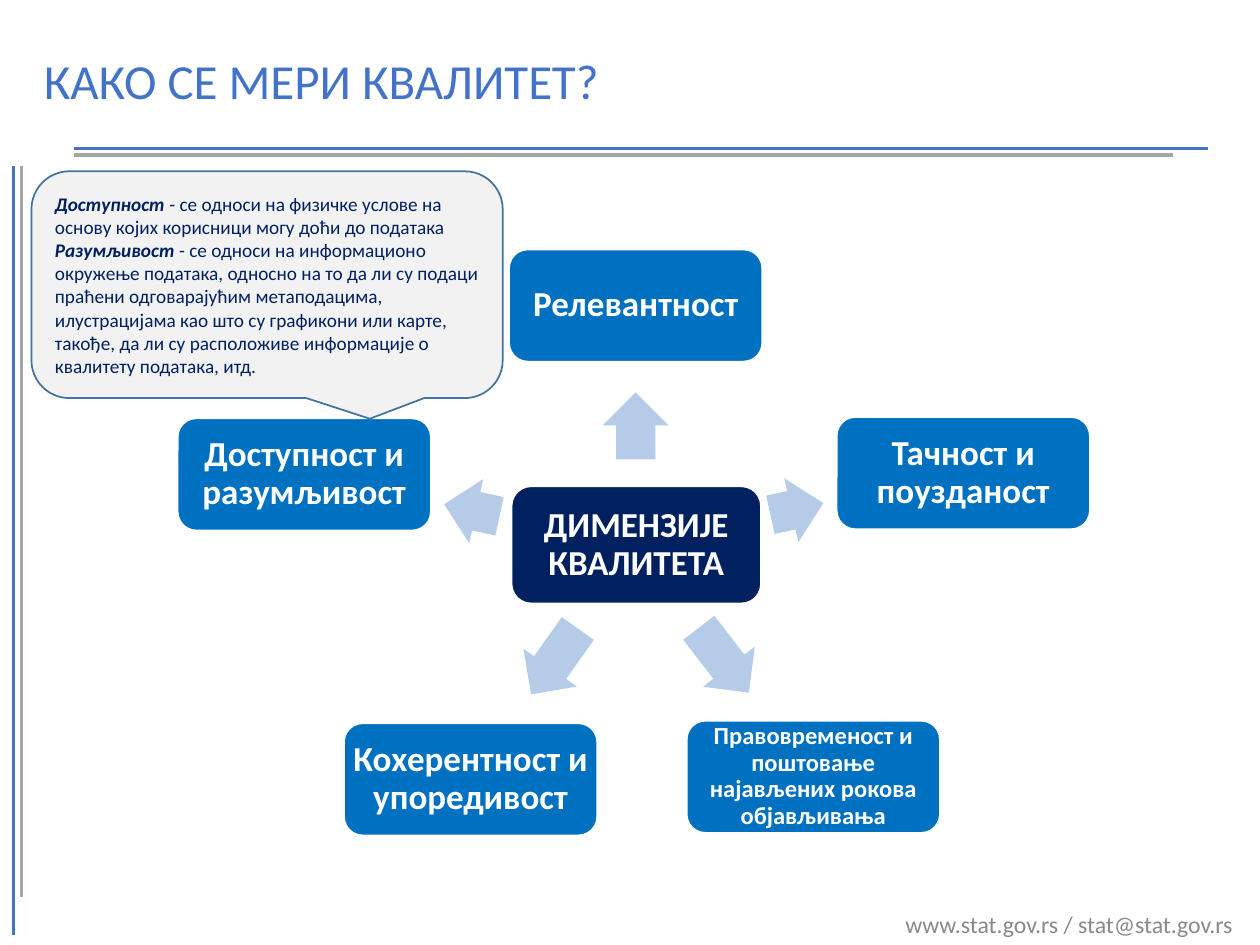
from lxml.etree import SubElement
from pptx import Presentation
from pptx.dml.color import RGBColor
from pptx.enum.shapes import MSO_CONNECTOR, MSO_SHAPE
from pptx.enum.text import MSO_ANCHOR, PP_ALIGN
from pptx.oxml.ns import qn
from pptx.util import Inches, Pt

HUES = {
    "title": "4272CA", "rule": "4472C4", "grey": "A5A5A5", "foot": "898989",
    "navy": "002060", "blue": "0070C0", "arrow": "B5CBE7", "note": "F2F2F2",
    "edge": "43739E", "white": "FFFFFF",
}
HUB = "ДИМЕНЗИЈЕ КВАЛИТЕТА"
NODES = [
    ("Релевантност", 20, (2.63, 0), (3.37, 1.14, 0.53), 270),
    ("Тачност и поузданост", 20, (5.23, 1.33), (4.7, 1.8, 0.43), 347.6),
    ("Правовременост и поштовање најављених рокова објављивања", 14,
     (4.04, 3.74), (4.01, 3, 0.65), 52.3),
    ("Кохерентност и упоредивост", 20, (1.32, 3.76), (2.67, 3.01, 0.64), 125.3),
    ("Доступност и разумљивост", 20, (0, 1.34), (2.11, 1.81, 0.45), 192.2),
]
NOTES = [
    ("Доступност", " - се односи на физичке услове на основу којих корисници "
     "могу доћи до података"),
    ("Разумљивост ", "- се односи на информационо окружење података, односно на "
     "то да ли су подаци праћени одговарајућим метаподацима, илустрацијама као "
     "што су графикони или карте, такође, да ли су расположиве информације о "
     "квалитету података, итд."),
]


def hue(name):
    """Return the named colour."""
    return RGBColor.from_string(HUES[name])


def style(item, values):
    """Set each attribute of the item from a dict."""
    for key, value in values.items():
        setattr(item, key, value)


def write(para, text, size, color, **extra):
    """Add one styled run to a paragraph."""
    run = para.add_run()
    run.text = text
    style(run.font, {"name": "Calibri", "size": Pt(size), **extra})
    run.font.color.rgb = hue(color)


def setup(frame, inset=None):
    """Wrap and centre a text frame vertically, with an optional inset."""
    style(frame, {"word_wrap": True, "vertical_anchor": MSO_ANCHOR.MIDDLE})
    if inset is not None:
        sides = ("left", "top", "right", "bottom")
        style(frame, {f"margin_{side}": Inches(inset) for side in sides})


def shape(slide, kind, box, fill, edge=None):
    """Add a flat filled shape with an optional outline."""
    item = slide.shapes.add_shape(kind, *map(Inches, box))
    item.shadow.inherit = False
    item.fill.solid()
    item.fill.fore_color.rgb = hue(fill)
    if edge:
        item.line.color.rgb = hue(edge)
        item.line.width = Pt(1)
    else:
        item.line.fill.background()
    return item


def label(slide, box, text, size, color, align):
    """Add a one-line text box."""
    frame = slide.shapes.add_textbox(*map(Inches, box)).text_frame
    setup(frame)
    para = frame.paragraphs[0]
    style(para, {"alignment": align, "line_spacing": 0.9})
    write(para, text, size, color)


def rules(slide, box, ends):
    """Draw a blue and a grey rule from the corner of a box."""
    x, y, dx, dy = box
    for color, (right, down) in zip(("rule", "grey"), ends):
        line = slide.shapes.add_connector(
            MSO_CONNECTOR.STRAIGHT, *map(Inches, (x, y, x + right, y + down)))
        line.line.color.rgb = hue(color)
        line.line.width = Pt(1.75)
        SubElement(line._element.spPr, qn("a:effectLst"))
        x, y = x + dx, y + dy


def node(slide, box, text, size, fill):
    """Add a rounded box with bold centred text."""
    item = shape(slide, MSO_SHAPE.ROUNDED_RECTANGLE, box, fill, "white")
    setup(item.text_frame, 0.03 if size == 20 else 0.02)
    para = item.text_frame.paragraphs[0]
    style(para, {"alignment": PP_ALIGN.CENTER, "line_spacing": 0.9})
    write(para, text, size, "white", bold=True)


def wheel(slide, left, top):
    """Place the hub with its arrows and outer nodes."""
    node(slide, (left + 2.65, top + 1.88, 1.98, 0.93), HUB, 20, "navy")
    for text, size, (x, y), (ax, ay, width), angle in NODES:
        box = (left + ax, top + ay, width, 0.52)
        arrow = shape(slide, MSO_SHAPE.RIGHT_ARROW, box, "arrow")
        arrow.adjustments[0] = 0.6
        arrow.adjustments[1] = 0.5 * 0.52 / min(width, 0.52) if width < 0.5 else 0.5
        arrow.rotation = angle
        node(slide, (left + x, top + y, 2.01, 0.89), text, size, "blue")


def callout(slide, box):
    """Place the callout that explains two terms."""
    item = shape(slide, MSO_SHAPE.ROUNDED_RECTANGULAR_CALLOUT, box, "note", "edge")
    for spot, value in enumerate((0.218, 0.591, 0.167)):
        item.adjustments[spot] = value
    frame = item.text_frame
    setup(frame)
    for spot, (term, text) in enumerate(NOTES):
        para = frame.add_paragraph() if spot else frame.paragraphs[0]
        para.alignment = PP_ALIGN.LEFT
        write(para, term, 11, "navy", bold=True, italic=True)
        write(para, text, 11, "navy")


def main():
    """Build and save the slide."""
    deck = Presentation()
    style(deck, {"slide_width": Inches(10), "slide_height": Inches(7.5)})
    slide = deck.slides.add_slide(deck.slide_layouts[6])
    label(slide, (6.5, 7.2, 3.38, 0.3), "www.stat.gov.rs / stat@stat.gov.rs",
          13.6, "foot", PP_ALIGN.RIGHT)
    rules(slide, (0.11, 1.32, 0.06, 0), [(0, 6.1), (0, 5.8)])
    rules(slide, (0.59, 1.18, 0, 0.05), [(9, 0), (8.72, 0)])
    label(slide, (0.25, 0.16, 9.5, 1), "КАКО СЕ МЕРИ КВАЛИТЕТ?",
          28, "title", PP_ALIGN.LEFT)
    wheel(slide, 1.41, 1.98)
    callout(slide, (0.25, 1.36, 3.74, 1.8))
    deck.save("out.pptx")


if __name__ == "__main__":
    main()
